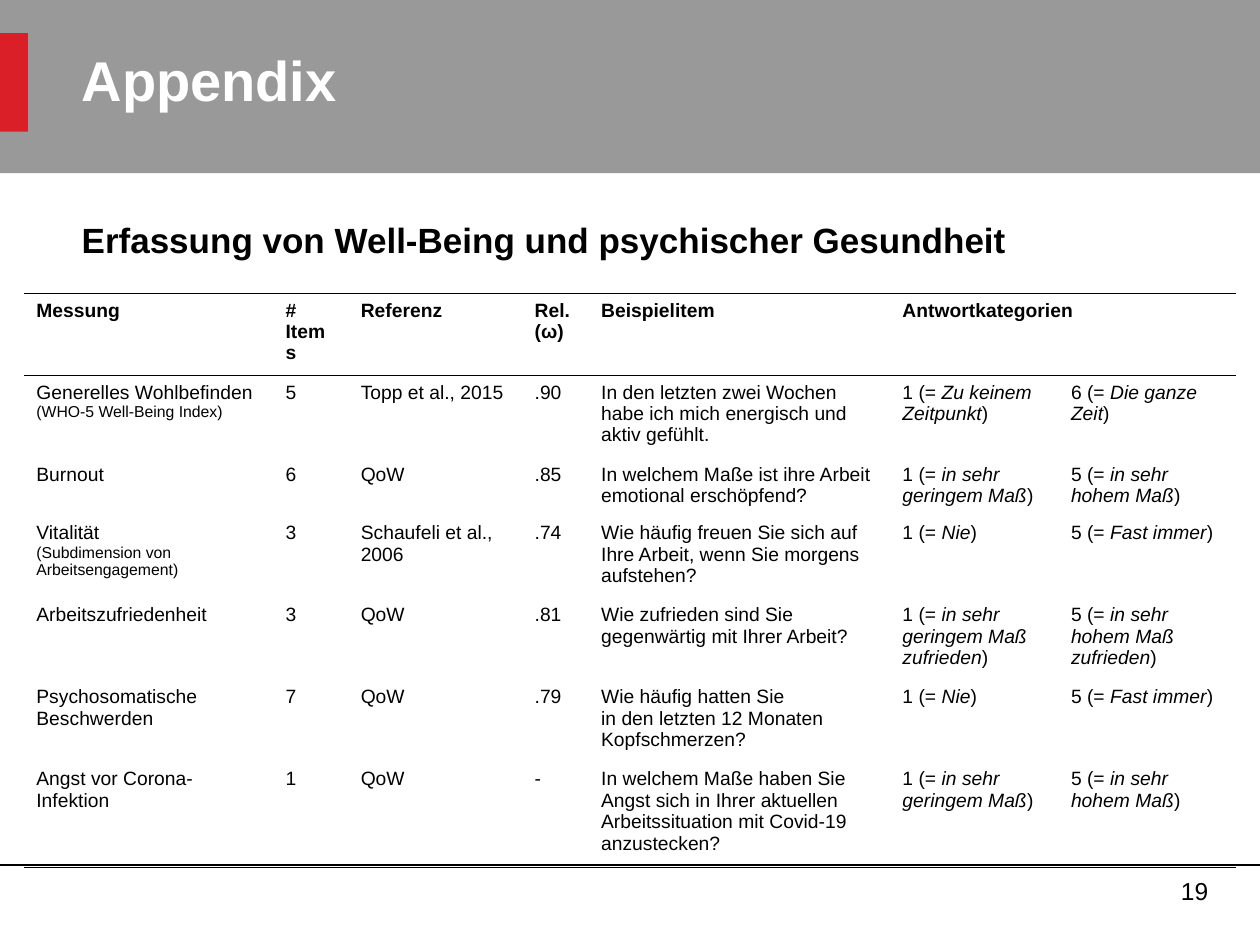
from lxml import etree
from pptx import Presentation
from pptx.dml.color import RGBColor
from pptx.enum.shapes import MSO_CONNECTOR, MSO_SHAPE
from pptx.enum.text import MSO_ANCHOR, PP_ALIGN
from pptx.oxml import parse_xml
from pptx.oxml.ns import qn
from pptx.util import Pt

RECT, STRAIGHT = MSO_SHAPE.RECTANGLE, MSO_CONNECTOR.STRAIGHT
TOP, MIDDLE = MSO_ANCHOR.TOP, MSO_ANCHOR.MIDDLE
LEFT, RIGHT, JUSTIFY = PP_ALIGN.LEFT, PP_ALIGN.RIGHT, PP_ALIGN.JUSTIFY
GREY = RGBColor(0x80, 0x80, 0x80)
RED = RGBColor(0xDA, 0x1F, 0x28)
BLACK = RGBColor(0, 0, 0)
WHITE = RGBColor(0xFF, 0xFF, 0xFF)
FONT = "Arial"
NO_STYLE = "{2D5ABB26-0587-4C30-8999-92F81FD0307C}"
A_NS = "http://schemas.openxmlformats.org/drawingml/2006/main"

COL_WIDTHS = [142.4, 43, 99.4, 38, 172.2, 96.3, 101.3]
MIN_ROW_HEIGHT = 10  # rows grow to fit their text
HEADER = ["Messung", "# Items", "Referenz", "Rel. (ω)", "Beispielitem", "Antwortkategorien"]
# Measure (name, note), items, reference, reliability, example, lowest and highest answer
ROWS = [
    (("Generelles Wohlbefinden", "(WHO-5 Well-Being Index)"), "5", "Topp et al., 2015", ".90",
     "In den letzten zwei Wochen habe ich mich energisch und aktiv gefühlt.",
     ("1", "Zu keinem Zeitpunkt"), ("6", "Die ganze Zeit")),
    (("Burnout", ""), "6", "QoW", ".85",
     "In welchem Maße ist ihre Arbeit emotional erschöpfend?",
     ("1", "in sehr geringem Maß"), ("5", "in sehr hohem Maß")),
    (("Vitalität", "(Subdimension von Arbeitsengagement)"), "3", "Schaufeli et al., 2006", ".74",
     "Wie häufig freuen Sie sich auf Ihre Arbeit, wenn Sie morgens aufstehen?",
     ("1", "Nie"), ("5", "Fast immer")),
    (("Arbeitszufriedenheit", ""), "3", "QoW", ".81",
     "Wie zufrieden sind Sie gegenwärtig mit Ihrer Arbeit?",
     ("1", "in sehr geringem Maß zufrieden"), ("5", "in sehr hohem Maß zufrieden")),
    (("Psychosomatische Beschwerden", ""), "7", "QoW", ".79",
     "Wie häufig hatten Sie\nin den letzten 12 Monaten Kopfschmerzen?",
     ("1", "Nie"), ("5", "Fast immer")),
    (("Angst vor Corona-Infektion", ""), "1", "QoW", "-",
     "In welchem Maße haben Sie Angst sich in Ihrer aktuellen Arbeitssituation "
     "mit Covid-19 anzustecken?",
     ("1", "in sehr geringem Maß"), ("5", "in sehr hohem Maß")),
]


def set_font(font, size, color=BLACK, bold=False):
    font.name, font.size, font.bold = FONT, Pt(size), bold
    font.color.rgb = color


def add_text(s, box, text, size, color=BLACK, bold=False, align=LEFT, anchor=TOP):
    sp = s.shapes.add_textbox(*map(Pt, box))
    tf = sp.text_frame
    tf.word_wrap = True
    tf.vertical_anchor = anchor
    p = tf.paragraphs[0]
    p.text, p.alignment = text, align
    set_font(p.font, size, color, bold)


def add_rect(s, box, color):
    sp = s.shapes.add_shape(RECT, *map(Pt, box))
    sp.shadow.inherit = False
    sp.fill.solid()
    sp.fill.fore_color.rgb = color
    sp.line.fill.background()
    return sp


def add_banner(s, x, y, w, h):
    band = add_rect(s, (x, y, w, h), GREY)
    color = band.fill._xPr.find(qn("a:solidFill"))[0]
    etree.SubElement(color, qn("a:alpha")).set("val", "80000")
    add_rect(s, (x, y + 19, 16, 56.3), RED)
    add_text(s, (x + 39.6, y + 22.3, 653, 66), "Appendix", 32, WHITE, True)


def add_footer(s, x, y, w, h):
    line = s.shapes.add_connector(STRAIGHT, Pt(x), Pt(y), Pt(x + w), Pt(y))
    line.line.color.rgb, line.line.width = BLACK, Pt(1)
    etree.SubElement(line._element.spPr, qn("a:effectLst"))
    add_text(s, (x + w - 66.5, y, 44, h), "19", 14, align=RIGHT, anchor=MIDDLE)


def add_borders(cell, sides):
    tc_pr = cell._tc.get_or_add_tcPr()
    for i, side in enumerate(sides):
        tc_pr.insert(i, parse_xml(
            f'<a:ln{side} xmlns:a="{A_NS}" w="12700"><a:solidFill>'
            f'<a:srgbClr val="{BLACK}"/></a:solidFill></a:ln{side}>'))


def fill_measure(cell, name, note):
    p = cell.text_frame.paragraphs[0]
    r = p.add_run()
    r.text = name
    set_font(r.font, 11)
    if note:
        p.add_line_break()
        r = p.add_run()
        r.text = note
        set_font(r.font, 9)


def fill_answer(cell, value, label):
    p = cell.text_frame.paragraphs[0]
    for text, italic in ((f"{value} (= ", False), (label, True), (")", False)):
        r = p.add_run()
        r.text, r.font.italic = text, italic


def add_scale_table(s, x, y):
    n_rows, n_cols = len(ROWS) + 1, len(COL_WIDTHS)
    frame = s.shapes.add_table(n_rows, n_cols, Pt(x), Pt(y),
                               Pt(sum(COL_WIDTHS)), Pt(n_rows * MIN_ROW_HEIGHT))
    table = frame.table
    table.first_row = table.horz_banding = False
    table._tbl.tblPr.find(qn("a:tableStyleId")).text = NO_STYLE
    for col, width in zip(table.columns, COL_WIDTHS):
        col.width = Pt(width)
    table.cell(0, 5).merge(table.cell(0, 6))

    # Contents
    for c, text in enumerate(HEADER):
        table.cell(0, c).text = text
    for i, (measure, *texts, low, high) in enumerate(ROWS, 1):
        fill_measure(table.cell(i, 0), *measure)
        for c, text in enumerate(texts, 1):
            table.cell(i, c).text = text
        fill_answer(table.cell(i, 5), *low)
        fill_answer(table.cell(i, 6), *high)

    # Fonts, fills and rules
    rules = {0: "TB", len(ROWS): "B"}
    for i, row in enumerate(table.rows):
        for cell in row.cells:
            cell.fill.background()
            add_borders(cell, rules.get(i, ""))
            for p in cell.text_frame.paragraphs:
                set_font(p.font, 11, bold=i == 0)


def main():
    prs = Presentation()
    prs.slide_width, prs.slide_height = Pt(720), Pt(540)
    s = prs.slides.add_slide(prs.slide_layouts[6])
    add_banner(s, 0, 0, 720, 99)
    add_footer(s, 0, 494.5, 720, 29)
    add_text(s, (39.6, 121.4, 669.6, 52), "Erfassung von Well-Being und psychischer Gesundheit",
             20, bold=True, align=JUSTIFY)
    add_scale_table(s, 13.6, 167.6)
    prs.save("out.pptx")


if __name__ == "__main__":
    main()
